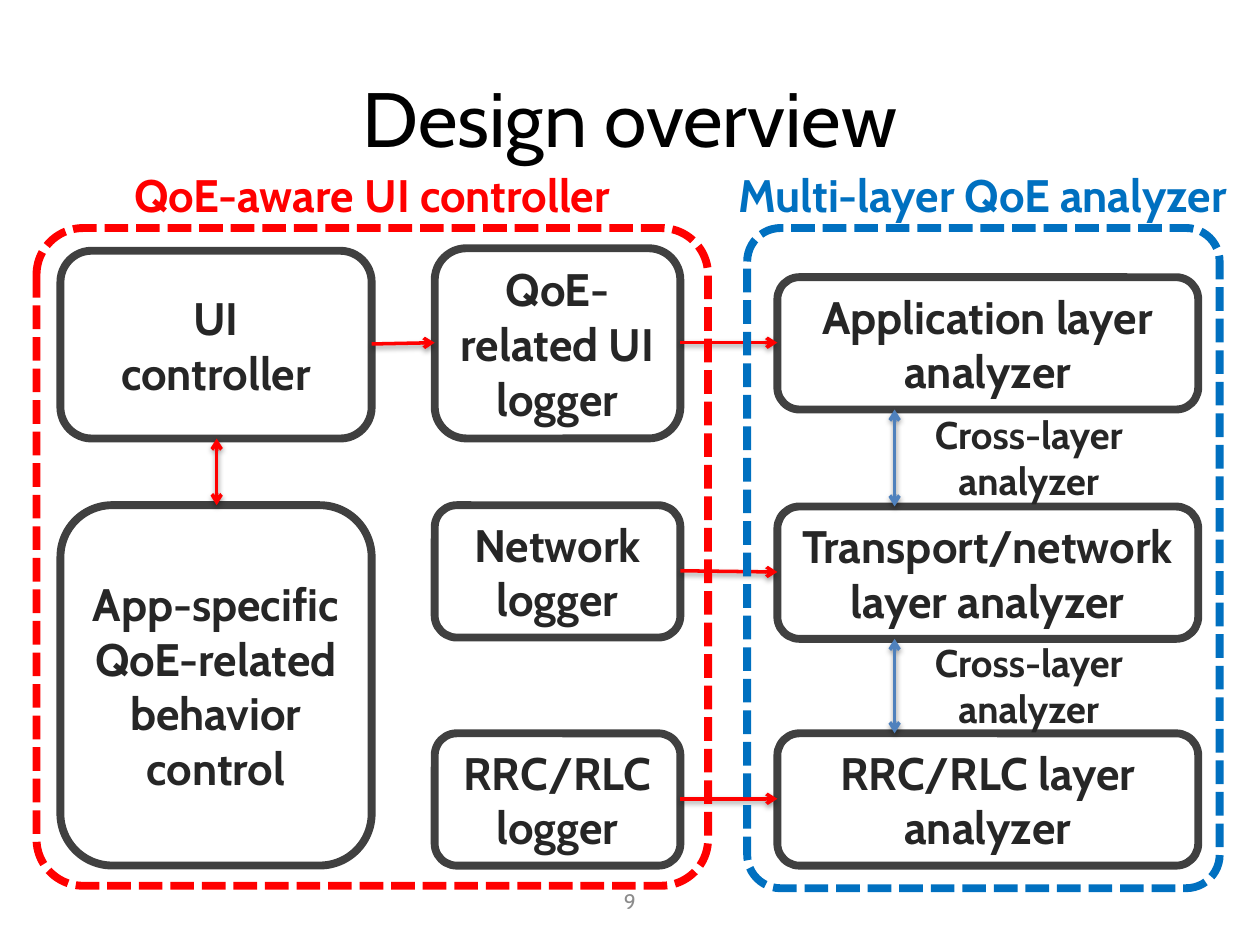
from lxml import etree
from pptx import Presentation
from pptx.dml.color import RGBColor
from pptx.enum.dml import MSO_LINE
from pptx.enum.shapes import MSO_CONNECTOR, MSO_SHAPE
from pptx.enum.text import MSO_ANCHOR, PP_ALIGN
from pptx.oxml.ns import qn
from pptx.util import Inches, Pt

ROUNDED = MSO_SHAPE.ROUNDED_RECTANGLE
STRAIGHT = MSO_CONNECTOR.STRAIGHT
SHORT_DASH = MSO_LINE.SQUARE_DOT
CENTER = PP_ALIGN.CENTER
TOP, MIDDLE = MSO_ANCHOR.TOP, MSO_ANCHOR.MIDDLE

FONT = "Cabin"
RED, BLUE, STEEL = "FF0000", "0070C0", "4F81BD"
INK, BORDER, WHITE = "262626", "404040", "FFFFFF"

# Columns as (left, width), rows as (top, height)
CONTROL, LOGGER, ANALYZER = (0.48, 2.47), (3.45, 1.95), (6.17, 3.34)
BOX_HEIGHT = 1.05
NETWORK_TOP, TRANSPORT_TOP, RRC_TOP = 4.01, 4.02, 5.82
APPLICATION_TOP = 2.2
UI_BOTTOM = 3.48
CONTROL_ARROW_X, CROSS_LAYER_X = 1.72, 7.1


def color(hex_value):
    return RGBColor.from_string(hex_value)


def write(shape, lines, size, hex_color, bold=True, anchor=MIDDLE):
    """Put one centred paragraph per line into the shape."""
    frame = shape.text_frame
    frame.word_wrap = True
    frame.vertical_anchor = anchor
    for index, line in enumerate(lines):
        paragraph = frame.paragraphs[0] if index == 0 else frame.add_paragraph()
        paragraph.alignment = CENTER
        run = paragraph.add_run()
        run.text = line
        run.font.name = FONT
        run.font.size = Pt(size)
        run.font.bold = bold
        run.font.color.rgb = color(hex_color)


def add_label(slide, bounds, lines, size, hex_color, bold=True, anchor=TOP):
    label = slide.shapes.add_textbox(*map(Inches, bounds))
    write(label, lines, size, hex_color, bold, anchor)


def add_outline(slide, bounds, hex_color):
    outline = slide.shapes.add_shape(ROUNDED, *map(Inches, bounds))
    outline.shadow.inherit = False
    outline.line.color.rgb = color(hex_color)
    outline.line.width = Pt(4.5)
    return outline


def add_box(slide, column, top, height, *lines):
    left, width = column
    box = add_outline(slide, (left, top, width, height), BORDER)
    box.fill.solid()
    box.fill.fore_color.rgb = color(WHITE)
    write(box, lines, 26, INK)


def add_group_frame(slide, bounds, hex_color):
    frame = add_outline(slide, bounds, hex_color)
    frame.adjustments[0] = 0.071
    frame.fill.background()
    frame.line.dash_style = SHORT_DASH


def add_soft_shadow(connector):
    effects = etree.SubElement(connector._element.spPr, qn("a:effectLst"))
    shadow = etree.SubElement(
        effects, qn("a:outerShdw"), blurRad=str(Pt(3.1)), dist=str(Pt(1.6)),
        dir=str(90 * 60000), rotWithShape="0")
    black = etree.SubElement(shadow, qn("a:srgbClr"), val="000000")
    etree.SubElement(black, qn("a:alpha"), val="38000")


def add_arrow(slide, start, end, hex_color=RED, both_ways=False):
    arrow = slide.shapes.add_connector(STRAIGHT, *map(Inches, start + end))
    arrow.line.color.rgb = color(hex_color)
    arrow.line.width = Pt(2)
    line = arrow.line._get_or_add_ln()
    for tag in ("a:headEnd", "a:tailEnd") if both_ways else ("a:tailEnd",):
        etree.SubElement(line, qn(tag), type="arrow")
    add_soft_shadow(arrow)


def add_boxes(slide):
    add_box(slide, CONTROL, 1.99, 1.49, "UI", "controller")
    add_box(slide, CONTROL, NETWORK_TOP, 2.86,
            "App-specific QoE-related", "behavior", "control")
    add_box(slide, LOGGER, 1.97, 1.51, "QoE-related UI logger")
    add_box(slide, LOGGER, NETWORK_TOP, BOX_HEIGHT, "Network logger")
    add_box(slide, LOGGER, RRC_TOP, BOX_HEIGHT, "RRC/RLC logger")
    add_box(slide, ANALYZER, APPLICATION_TOP, BOX_HEIGHT,
            "Application layer", "analyzer")
    add_box(slide, ANALYZER, TRANSPORT_TOP, BOX_HEIGHT,
            "Transport/network layer analyzer")
    add_box(slide, ANALYZER, RRC_TOP, BOX_HEIGHT, "RRC/RLC layer", "analyzer")


def add_arrows(slide):
    control_right, logger_right = sum(CONTROL), sum(LOGGER)
    add_arrow(slide, (control_right, 2.73), (LOGGER[0], 2.72))
    for start_y, end_y in ((2.72, 2.72), (4.53, 4.54), (6.34, 6.34)):
        add_arrow(slide, (logger_right, start_y), (ANALYZER[0], end_y))
    add_arrow(slide, (CONTROL_ARROW_X, UI_BOTTOM),
              (CONTROL_ARROW_X, NETWORK_TOP), both_ways=True)
    for upper, lower in ((APPLICATION_TOP, TRANSPORT_TOP),
                         (TRANSPORT_TOP, RRC_TOP)):
        add_arrow(slide, (CROSS_LAYER_X, upper + BOX_HEIGHT),
                  (CROSS_LAYER_X, lower), STEEL, both_ways=True)


def main():
    deck = Presentation()
    deck.slide_width, deck.slide_height = Inches(10), Inches(7.5)
    slide = deck.slides.add_slide(deck.slide_layouts[6])

    add_label(slide, (0.5, 0.3, 9, 1.25), ["Design overview"], 44, "000000",
              bold=False, anchor=MIDDLE)
    add_label(slide, (0.5, 6.95, 9, 0.4), ["9"], 12, "8C8C8C",
              bold=False, anchor=MIDDLE)
    add_boxes(slide)
    add_arrows(slide)
    add_group_frame(slide, (5.93, 1.81, 3.75, 5.24), BLUE)
    add_group_frame(slide, (0.29, 1.81, 5.33, 5.22), RED)
    add_label(slide, (0.29, 1.28, 5.33, 0.54),
              ["QoE-aware UI controller"], 26, RED)
    add_label(slide, (5.72, 1.28, 4.16, 0.54),
              ["Multi-layer QoE analyzer"], 26, BLUE)
    for top in (3.21, 5.02):
        add_label(slide, (7.25, top, 1.83, 0.84),
                  ["Cross-layer", "analyzer"], 22, INK)

    deck.save("out.pptx")


if __name__ == "__main__":
    main()
